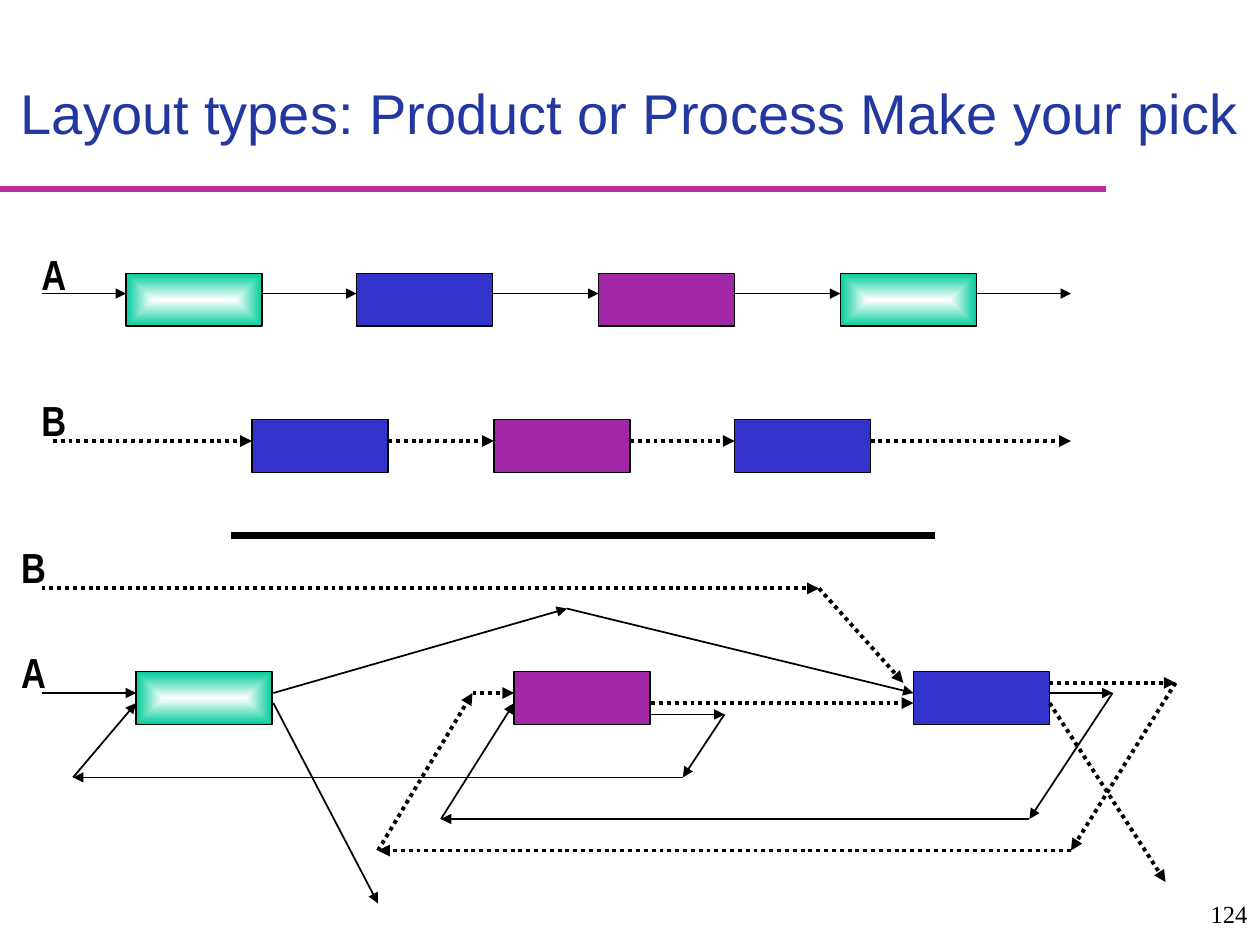
from dataclasses import dataclass
from enum import Enum

import pptx
import pptx.dml.color
import pptx.enum.dml
import pptx.enum.shapes
import pptx.enum.text
import pptx.oxml.ns
import pptx.oxml.xmlchemy
import pptx.util

Inches = pptx.util.Inches
Pt = pptx.util.Pt
RGBColor = pptx.dml.color.RGBColor
Anchor = pptx.enum.text.MSO_ANCHOR
Align = pptx.enum.text.PP_ALIGN
qn = pptx.oxml.ns.qn
new_element = pptx.oxml.xmlchemy.OxmlElement

BLACK = RGBColor(0x00, 0x00, 0x00)
WHITE = RGBColor(0xFF, 0xFF, 0xFF)
GREEN = RGBColor(0x00, 0xCC, 0x99)
BLUE = RGBColor(0x33, 0x33, 0xCC)
PURPLE = RGBColor(0xA1, 0x27, 0xA7)
TITLE_BLUE = RGBColor(0x22, 0x37, 0xA0)
MAGENTA = RGBColor(0xC0, 0x2C, 0x9D)

STATION_WIDTH, STATION_HEIGHT = 1.08, 0.42
A_TOP, B_TOP, PROCESS_TOP = 2.17, 3.33, 5.33
A_FLOW, B_FLOW = 2.33, 3.5

Point = tuple[float, float]


class Product(Enum):
    A = "A"
    B = "B"


@dataclass(frozen=True)
class Station:
    left: float
    top: float
    color: RGBColor


@dataclass(frozen=True)
class Route:
    """A run of arrows, one for each step between neighbouring points."""
    product: Product
    points: tuple[Point, ...]


@dataclass(frozen=True)
class Label:
    product: Product
    left: float
    top: float
    width: float


LINE_A = [Station(left, A_TOP, color) for left, color in
          ((1, GREEN), (2.83, BLUE), (4.75, PURPLE), (6.67, GREEN))]
LINE_B = [Station(left, B_TOP, color) for left, color in
          ((2, BLUE), (3.92, PURPLE), (5.83, BLUE))]
PROCESS = [Station(left, PROCESS_TOP, color) for left, color in
           ((1.08, GREEN), (4.08, PURPLE), (7.25, BLUE))]

PROCESS_ROUTES = [
    Route(Product.A, ((0.33, 5.5), (1.08, 5.5))),
    Route(Product.A, ((2.17, 5.5), (4.5, 4.83), (7.25, 5.5))),
    Route(Product.A, ((8.33, 5.5), (8.83, 5.5), (8.17, 6.5), (3.5, 6.5), (4.08, 5.58))),
    Route(Product.A, ((5.17, 5.67), (5.75, 5.67), (5.42, 6.17), (0.58, 6.17), (1.08, 5.58))),
    Route(Product.A, ((2.17, 5.58), (3, 7.17))),
    Route(Product.B, ((0.33, 4.67), (6.5, 4.67), (7.17, 5.42))),
    Route(Product.B, ((8.33, 5.42), (9.33, 5.42), (8.5, 6.75), (3, 6.75),
                      (3.75, 5.5), (4.08, 5.5))),
    Route(Product.B, ((5.17, 5.58), (7.25, 5.58))),
    Route(Product.B, ((8.33, 5.58), (9.25, 7))),
]

LABELS = [
    Label(Product.A, 0.23, 1.92, 0.43),
    Label(Product.B, 0.23, 3.08, 0.43),
    Label(Product.B, 0.07, 4.25, 0.4),
    Label(Product.A, 0.07, 5.08, 0.4),
]


def write_text(box, text: str, *, font: str, size: float, color: RGBColor,
               bold: bool = False, align=Align.LEFT, anchor=Anchor.TOP) -> None:
    frame = box.text_frame
    frame.word_wrap = True
    frame.auto_size = pptx.enum.text.MSO_AUTO_SIZE.NONE
    frame.vertical_anchor = anchor
    para = frame.paragraphs[0]
    para.alignment = align
    span = para.add_run()
    span.text = text
    span.font.name = font
    span.font.size = Pt(size)
    span.font.bold = bold
    span.font.color.rgb = color


def add_line(page, start: Point, end: Point, *, color: RGBColor = BLACK,
             width: float = 1, dotted: bool = False, arrow: bool = False) -> None:
    line = page.shapes.add_connector(
        pptx.enum.shapes.MSO_CONNECTOR.STRAIGHT,
        *(Inches(value) for value in (*start, *end)))
    line.line.color.rgb = color
    line.line.width = Pt(width)
    properties = line._element.spPr
    if dotted:
        # ROUND_DOT is the member that stands for sysDot
        line.line.dash_style = pptx.enum.dml.MSO_LINE.ROUND_DOT
    if arrow:
        tail = new_element("a:tailEnd")
        tail.set("type", "triangle")
        properties.find(qn("a:ln")).append(tail)
    properties.append(new_element("a:effectLst"))


def fill_from_centre(box, inner: RGBColor, outer: RGBColor) -> None:
    box.fill.gradient()
    for stop, color in zip(box.fill.gradient_stops, (inner, outer)):
        stop.color.rgb = color
    gradient = box._element.spPr.find(qn("a:gradFill"))
    shade = new_element("a:path")
    shade.set("path", "shape")
    centre = new_element("a:fillToRect")
    for side in "ltrb":
        centre.set(side, "50000")
    shade.append(centre)
    gradient.replace(gradient.find(qn("a:lin")), shade)


def add_station(page, station: Station) -> None:
    box = page.shapes.add_shape(
        pptx.enum.shapes.MSO_SHAPE.RECTANGLE, Inches(station.left), Inches(station.top),
        Inches(STATION_WIDTH), Inches(STATION_HEIGHT))
    box.shadow.inherit = False
    if station.color == GREEN:
        fill_from_centre(box, WHITE, GREEN)
    else:
        box.fill.solid()
        box.fill.fore_color.rgb = station.color
    box.line.color.rgb = BLACK
    box.line.width = Pt(1)


def add_route(page, route: Route) -> None:
    dotted = route.product is Product.B
    for start, end in zip(route.points, route.points[1:]):
        add_line(page, start, end, width=2.25 if dotted else 1, dotted=dotted, arrow=True)


def line_routes(product: Product, stations: list[Station], height: float,
                start: float, end: float) -> list[Route]:
    """Arrows into, between and out of the stations of one product line."""
    exits = [start] + [station.left + STATION_WIDTH for station in stations]
    entries = [station.left for station in stations] + [end]
    return [Route(product, ((left, height), (right, height)))
            for left, right in zip(exits, entries)]


def add_label(page, label: Label) -> None:
    box = page.shapes.add_textbox(Inches(label.left), Inches(label.top),
                                  Inches(label.width), Inches(0.5))
    write_text(box, label.product.value, font="Arial Narrow", size=24, color=BLACK, bold=True)


def main() -> None:
    deck = pptx.Presentation()
    deck.slide_width, deck.slide_height = Inches(10), Inches(7.5)
    page = deck.slides.add_slide(deck.slide_layouts[5])

    title = page.shapes.title
    title.left, title.top = Inches(0), Inches(0)
    title.width, title.height = Inches(10), Inches(1.21)
    write_text(title, "Layout types: Product or Process Make your pick", font="Arial",
               size=32, color=TITLE_BLUE, align=Align.CENTER, anchor=Anchor.BOTTOM)
    add_line(page, (0, 1.5), (8.78, 1.5), color=MAGENTA, width=4)

    number = page.shapes.add_textbox(Inches(7.67), Inches(7), Inches(2.33), Inches(0.5))
    number.line.color.rgb = WHITE
    number.line.width = Pt(0.75)
    write_text(number, "124", font="Times New Roman", size=14, color=BLACK,
               align=Align.RIGHT, anchor=Anchor.MIDDLE)

    for station in LINE_A + LINE_B + PROCESS:
        add_station(page, station)
    for route in (line_routes(Product.A, LINE_A, A_FLOW, 0.33, 8.5)
                  + line_routes(Product.B, LINE_B, B_FLOW, 0.42, 8.5)
                  + PROCESS_ROUTES):
        add_route(page, route)
    add_line(page, (1.83, 4.25), (7.42, 4.25), width=4.5)
    for label in LABELS:
        add_label(page, label)

    deck.save("out.pptx")


if __name__ == "__main__":
    main()
